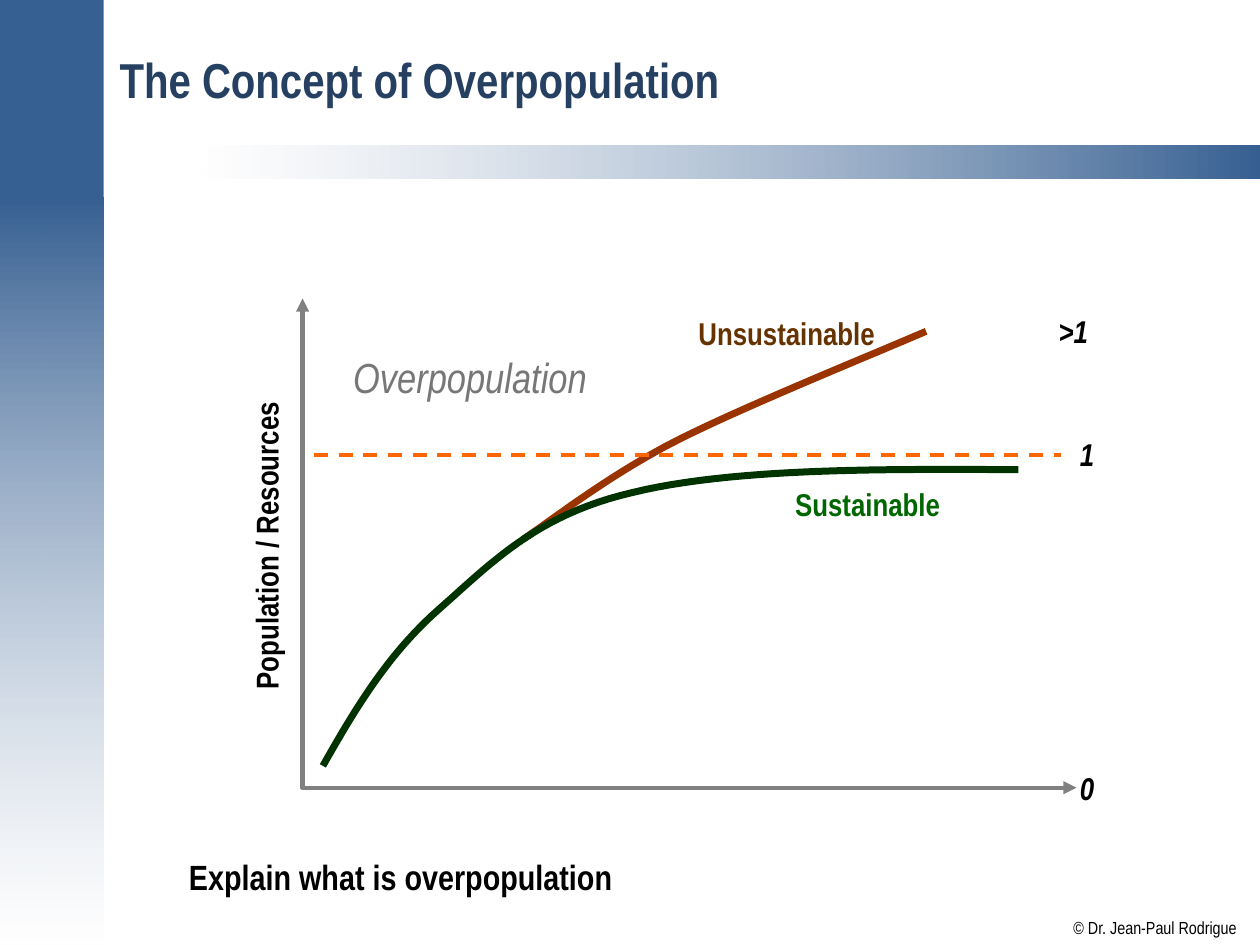
from lxml.etree import SubElement
from pptx import Presentation
from pptx.dml.color import RGBColor
from pptx.enum.dml import MSO_LINE
from pptx.enum.shapes import MSO_CONNECTOR, MSO_SHAPE
from pptx.enum.text import MSO_ANCHOR, MSO_AUTO_SIZE
from pptx.oxml.ns import qn
from pptx.util import Cm, Pt

FONT = "Arial Narrow"
BLUE, WHITE, BLACK = "376092", "FFFFFF", "000000"
STEPS = 24


def paint(code):
    """Turn a hex string into a colour."""
    return RGBColor.from_string(code)


def write(slide, box, text, size=18, color=BLACK, bold=False, italic=False,
          inset=(0, 0), wrap=False, anchor=MSO_ANCHOR.TOP):
    """Put one line of text in a box and return the shape."""
    shape = slide.shapes.add_textbox(*map(Cm, box))
    frame = shape.text_frame
    frame.word_wrap, frame.vertical_anchor = wrap, anchor
    if not wrap:
        frame.auto_size = MSO_AUTO_SIZE.SHAPE_TO_FIT_TEXT
    frame.margin_left = frame.margin_right = Cm(inset[0])
    frame.margin_top = frame.margin_bottom = Cm(inset[1])
    para = frame.paragraphs[0]
    para.text = text
    font = para.font
    font.name, font.size = FONT, Pt(size)
    font.bold, font.italic = bold, italic
    font.color.rgb = paint(color)
    return shape


def band(slide, box, stops, angle=0):
    """Draw a bar with a solid fill or a gradient of (colour, opacity) stops."""
    shape = slide.shapes.add_shape(MSO_SHAPE.RECTANGLE, *map(Cm, box))
    shape.shadow.inherit = False
    shape.line.fill.background()
    fill = shape.fill
    if len(stops) == 1:
        fill.solid()
        fill.fore_color.rgb = paint(stops[0][0])
        return
    fill.gradient()
    fill.gradient_angle = angle
    for stop, (color, _) in zip(fill.gradient_stops, stops):
        stop.color.rgb = paint(color)
    tints = shape.element.spPr.findall(".//" + qn("a:gs"))
    for tint, (_, alpha) in zip(tints, stops):
        if alpha < 100:
            SubElement(tint[0], qn("a:alpha"), val=str(alpha * 1000))


def bend(knots):
    """Sample the cubic curves that run through a list of knots."""
    points = [knots[0]]
    for at in range(0, len(knots) - 1, 3):
        a, b, c, d = knots[at:at + 4]
        for step in range(1, STEPS + 1):
            t = step / STEPS
            u = 1 - t
            points.append(tuple(
                u**3 * p + 3 * u * u * t * q + 3 * u * t * t * r + t**3 * s
                for p, q, r, s in zip(a, b, c, d)))
    return points


def trace(slide, left, top, points, color, width):
    """Draw an open line through points given from a corner."""
    spots = [(Cm(left + x), Cm(top + y)) for x, y in points]
    path = slide.shapes.build_freeform(*spots[0])
    path.add_line_segments(spots[1:], close=False)
    shape = path.convert_to_shape()
    shape.shadow.inherit = False
    shape.fill.background()
    shape.line.color.rgb = paint(color)
    shape.line.width = Pt(width)
    return shape


def frame(slide, wide, high):
    """Draw the side and top bands and the credit."""
    left, side, split = -0.02, 2.11, 3.98
    band(slide, (left, split, side, high - split), [(BLUE, 100), (WHITE, 51)], 270)
    band(slide, (4, 2.93, wide - 4, 0.67), [(WHITE, 50), (BLUE, 100)])
    band(slide, (left, left, side, split - left), [(BLUE, 100)])
    write(slide, (21.64, 18.49, 3.3, 0.43), "© Dr. Jean-Paul Rodrigue", 10)


def graph(slide, left, top, wide, high):
    """Draw the axes, curves, threshold and labels of the graph."""
    trace(slide, left, top, bend([
        (4.45, 4.85), (4.95, 4.52), (6.1, 3.61), (7.47, 2.9),
        (8.81, 2.21), (11.51, 1.12), (12.57, 0.66)]), "993300", 4)
    trace(slide, left, top, bend([
        (0.41, 9.42), (1.04, 8.31), (1.7, 7.19), (2.74, 6.27),
        (3.78, 5.36), (4.7, 4.36), (6.65, 3.91),
        (8.61, 3.43), (11.51, 3.43), (14.43, 3.45)]), "003300", 4)
    axes = trace(slide, left, top, [(0, 0), (0, high), (wide, high)], "808080", 2.5)
    for end in ("a:headEnd", "a:tailEnd"):
        SubElement(axes.line._get_or_add_ln(), qn(end), type="triangle")

    level = Cm(top + 3.15)
    limit = slide.shapes.add_connector(
        MSO_CONNECTOR.STRAIGHT, Cm(left + 0.23), level, Cm(left + 15.29), level)
    limit.line.color.rgb = paint("FF6600")
    limit.line.width = Pt(2)
    limit.line.dash_style = MSO_LINE.DASH
    SubElement(limit.element.spPr, qn("a:effectLst"))

    name = write(slide, (left - 3.63, top + 4.6, 5.79, 0.76),
                 "Population / Resources", bold=True)
    name.rotation = 270
    write(slide, (left + 1.02, top + 1.07, 4.78, 1.02), "Overpopulation", 24,
          "777777", italic=True)
    for x, y, w, text, color in (
            (9.93, 3.76, 2.96, "Sustainable", "006600"),
            (7.98, 0.32, 3.6, "Unsustainable", "663300")):
        write(slide, (left + x, top + y, w, 0.76), text, color=color, bold=True)
    for x, y, w, text in (
            (15.42, 2.62, 0.81, "1"), (15.42, 9.35, 0.81, "0"),
            (14.99, 0.15, 1.12, ">1")):
        write(slide, (left + x, top + y, w, 1.02), text, bold=True, italic=True,
              inset=(0.25, 0.13))


def main():
    """Build the slide and save it."""
    deck = Presentation()
    wide, high = 25.4, 19.05
    deck.slide_width, deck.slide_height = Cm(wide), Cm(high)
    slide = deck.slides.add_slide(deck.slide_layouts[6])
    frame(slide, wide, high)
    write(slide, (2.16, 0.28, 22.83, 2.64), "The Concept of Overpopulation", 28,
          "254061", bold=True, inset=(0.25, 0.13), wrap=True,
          anchor=MSO_ANCHOR.MIDDLE)
    graph(slide, 6.1, 6.02, 15.6, 9.86)
    write(slide, (3.56, 17.12, 21.44, 1.12), "Explain what is overpopulation", 20,
          bold=True, inset=(0.25, 0.13), wrap=True)
    deck.save("out.pptx")


if __name__ == "__main__":
    main()
